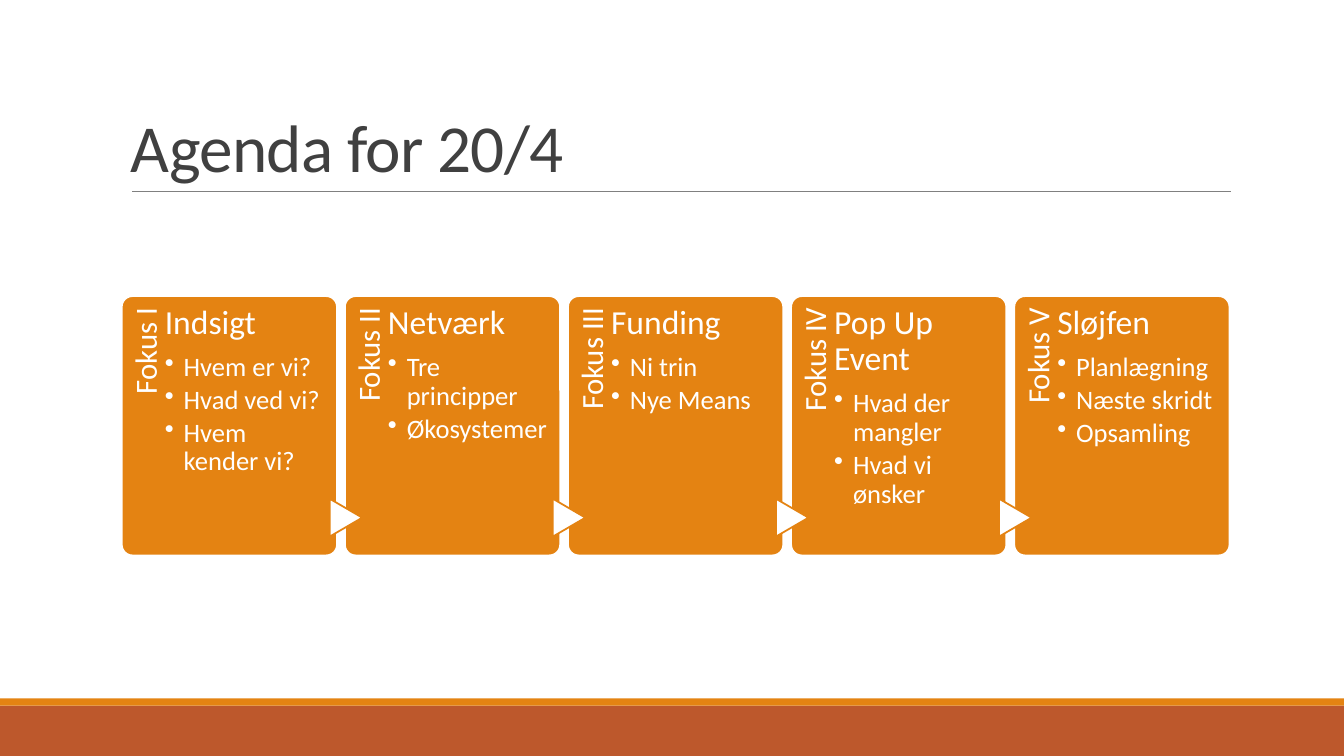
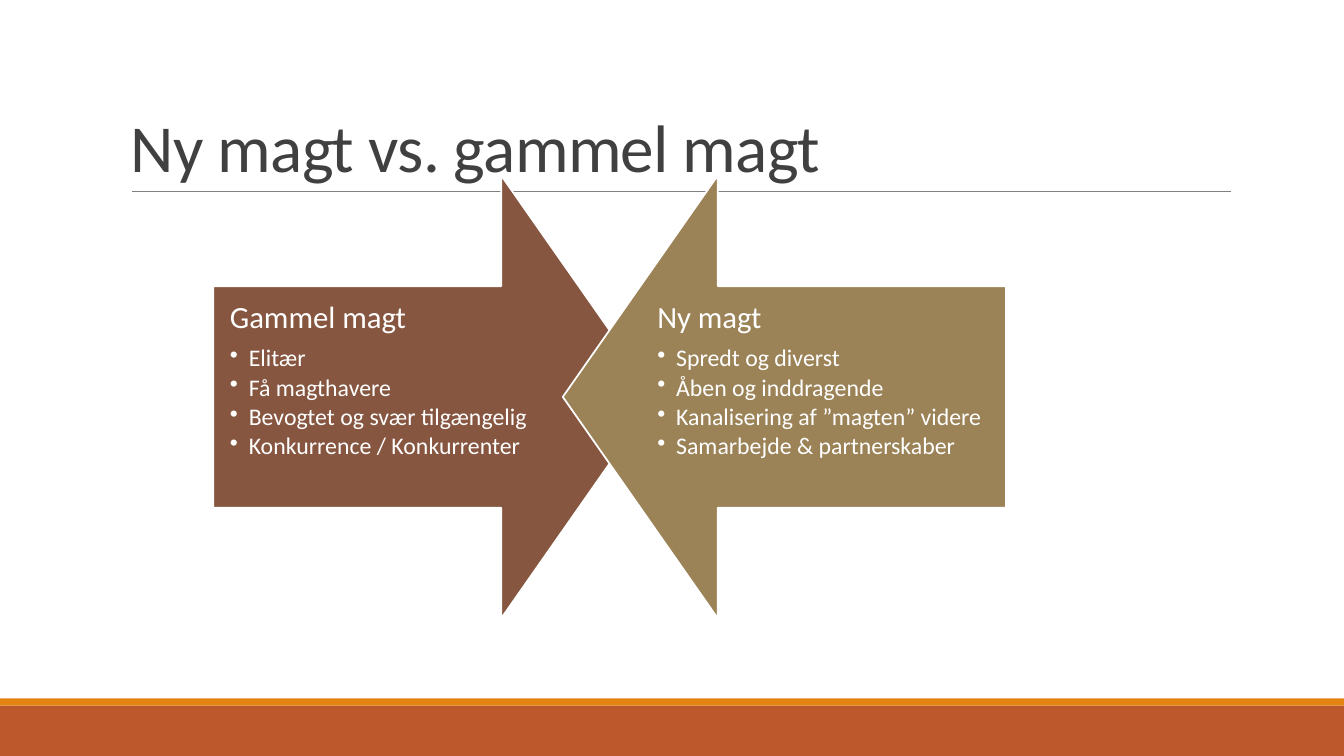
"""Build a two-slide deck: a five-step agenda and a pair of opposing arrows."""
from lxml import etree
from pptx import Presentation
from pptx.dml.color import RGBColor
from pptx.enum.shapes import MSO_CONNECTOR, MSO_SHAPE
from pptx.enum.text import MSO_ANCHOR, MSO_AUTO_SIZE, PP_ALIGN
from pptx.oxml.ns import qn
from pptx.util import Emu, Pt

RECT, ROUNDED = MSO_SHAPE.RECTANGLE, MSO_SHAPE.ROUNDED_RECTANGLE
TRIANGLE = MSO_SHAPE.FLOWCHART_EXTRACT
RIGHT_ARROW, LEFT_ARROW = MSO_SHAPE.RIGHT_ARROW, MSO_SHAPE.LEFT_ARROW
STRAIGHT = MSO_CONNECTOR.STRAIGHT
TOP, BOTTOM = MSO_ANCHOR.TOP, MSO_ANCHOR.BOTTOM
LEFT, RIGHT = PP_ALIGN.LEFT, PP_ALIGN.RIGHT
NO_FIT = MSO_AUTO_SIZE.NONE

WHITE = RGBColor(0xFF, 0xFF, 0xFF)
ORANGE = RGBColor(0xE4, 0x83, 0x12)
RUST = RGBColor(0xBD, 0x58, 0x2C)
BROWN = RGBColor(0x86, 0x56, 0x40)
SAND = RGBColor(0x9B, 0x83, 0x57)
DARK = RGBColor(0x40, 0x40, 0x40)
GREY = RGBColor(0x80, 0x80, 0x80)
FONT = "Calibri"

SLIDE_W, SLIDE_H = 1280, 720
BANDS = [((0, 672, SLIDE_W, 48), RUST), ((0, 665, SLIDE_W, 7), ORANGE)]
TITLE_BOX = (115, 30, 1056, 152)
RULE_LEFT, RULE_RIGHT, RULE_Y = 126, 1172, 182
BULLET_INDENT = 18

AGENDA_TITLE = "Agenda for 20/4"
AGENDA = [
    ("Fokus I", "Indsigt", ["Hvem er vi?", "Hvad ved vi?", "Hvem kender vi?"]),
    ("Fokus II", "Netværk", ["Tre principper", "Økosystemer"]),
    ("Fokus III", "Funding", ["Ni trin", "Nye Means"]),
    ("Fokus IV", "Pop Up Event", ["Hvad der mangler", "Hvad vi ønsker"]),
    ("Fokus V", "Sløjfen", ["Planlægning", "Næste skridt", "Opsamling"]),
]
CARDS_LEFT, CARDS_RIGHT, CARD_Y = 116, 1171, 282
CARD_W, CARD_H = 205, 247
LABEL_W, LABEL_H = 41, 202
BODY_W = 153
MARKER_W, MARKER_H, MARKER_MID_Y = 36, 31, 493

POWER_TITLE = "Ny magt vs. gammel magt"
POWER = [
    (RIGHT_ARROW, BROWN, 203, 203, "Gammel magt",
     ["Elitær", "Få magthavere", "Bevogtet og svær tilgængelig",
      "Konkurrence / Konkurrenter"]),
    (LEFT_ARROW, SAND, 536, 610, "Ny magt",
     ["Spredt og diverst", "Åben og inddragende",
      "Kanalisering af ”magten” videre", "Samarbejde & partnerskaber"]),
]
ARROW_Y, ARROW_SIZE = 167, 422
ARROW_TEXT_Y, ARROW_TEXT_W, ARROW_TEXT_H = 272, 348, 211


def px(n):
    return Emu(round(n * 9525))


def box(*lengths):
    return [px(n) for n in lengths]


def add_shape(slide, kind, place, fill, line=None, adjustments=()):
    sp = slide.shapes.add_shape(kind, *box(*place))
    sp.shadow.inherit = False
    sp.fill.solid()
    sp.fill.fore_color.rgb = fill
    if line is None:
        sp.line.fill.background()
    else:
        sp.line.color.rgb = line
        sp.line.width = Pt(1.25)
    for i, value in enumerate(adjustments):
        sp.adjustments[i] = value
    return sp


def format_paragraph(p, size, color=WHITE, spacing=0.9, after=0, align=LEFT):
    p.alignment = align
    p.line_spacing = spacing
    p.space_before = Pt(0)
    p.space_after = Pt(after)
    for r in p.runs:
        r.font.name = FONT
        r.font.size = Pt(size)
        r.font.color.rgb = color


def add_bullet(p):
    p.level = 1
    pPr = p._p.get_or_add_pPr()
    pPr.set("marL", str(px(BULLET_INDENT)))
    pPr.set("indent", str(px(-BULLET_INDENT)))
    etree.SubElement(pPr, qn("a:buChar")).set("char", "•")


def add_text(slide, place, insets):
    sp = slide.shapes.add_textbox(*box(*place))
    tf = sp.text_frame
    tf.word_wrap = True
    tf.auto_size = NO_FIT
    tf.vertical_anchor = TOP
    tf.margin_left, tf.margin_top, tf.margin_right, tf.margin_bottom = box(*insets)
    return sp


def add_list(slide, place, insets, heading, items, heading_size, item_size):
    tf = add_text(slide, place, insets).text_frame
    tf.text = heading
    format_paragraph(tf.paragraphs[0], heading_size, after=heading_size * 0.35)
    for item in items:
        p = tf.add_paragraph()
        p.text = item
        format_paragraph(p, item_size, after=item_size * 0.15)
        add_bullet(p)


def add_titled_slide(prs, title):
    slide = prs.slides.add_slide(prs.slide_layouts[5])
    for place, color in BANDS:
        add_shape(slide, RECT, place, color)
    rule = slide.shapes.add_connector(
        STRAIGHT, *box(RULE_LEFT, RULE_Y, RULE_RIGHT, RULE_Y))
    rule.line.color.rgb = GREY
    rule.line.width = Pt(0.5)
    etree.SubElement(rule._element.spPr, qn("a:effectLst"))
    sp = slide.shapes.title
    sp.left, sp.top, sp.width, sp.height = box(*TITLE_BOX)
    tf = sp.text_frame
    tf.text = title
    tf.word_wrap = True
    tf.auto_size = NO_FIT
    tf.vertical_anchor = BOTTOM
    p = tf.paragraphs[0]
    format_paragraph(p, 48, DARK, 0.85)
    p.runs[0]._r.get_or_add_rPr().set("spc", "-50")
    return slide


def build_agenda(prs):
    slide = add_titled_slide(prs, AGENDA_TITLE)
    pitch = (CARDS_RIGHT - CARDS_LEFT - CARD_W) / (len(AGENDA) - 1)
    for i, (label, heading, items) in enumerate(AGENDA):
        x = CARDS_LEFT + i * pitch
        add_shape(slide, ROUNDED, (x, CARD_Y, CARD_W, CARD_H), ORANGE, WHITE, [0.05])
        label_x = x + (LABEL_W - LABEL_H) / 2
        label_y = CARD_Y + (LABEL_H - LABEL_W) / 2
        sp = add_text(slide, (label_x, label_y, LABEL_H, LABEL_W), (0, 8, 11, 0))
        sp.rotation = 270
        sp.text_frame.text = label
        format_paragraph(sp.text_frame.paragraphs[0], 22, align=RIGHT)
        if i:
            marker = (x + 1 - MARKER_W / 2, MARKER_MID_Y - MARKER_H / 2,
                      MARKER_W, MARKER_H)
            add_shape(slide, TRIANGLE, marker, WHITE, ORANGE).rotation = 90
        add_list(slide, (x + LABEL_W, CARD_Y, BODY_W, CARD_H), (0, 9, 0, 0),
                 heading, items, 24, 19)


def build_power(prs):
    slide = add_titled_slide(prs, POWER_TITLE)
    for kind, color, arrow_x, text_x, heading, items in POWER:
        add_shape(slide, kind, (arrow_x, ARROW_Y, ARROW_SIZE, ARROW_SIZE),
                  color, WHITE, [0.5, 0.35])
        add_list(slide, (text_x, ARROW_TEXT_Y, ARROW_TEXT_W, ARROW_TEXT_H),
                 (16, 16, 16, 16), heading, items, 22, 17)


def main():
    prs = Presentation()
    prs.slide_width, prs.slide_height = box(SLIDE_W, SLIDE_H)
    build_agenda(prs)
    build_power(prs)
    prs.save("out.pptx")


if __name__ == "__main__":
    main()
